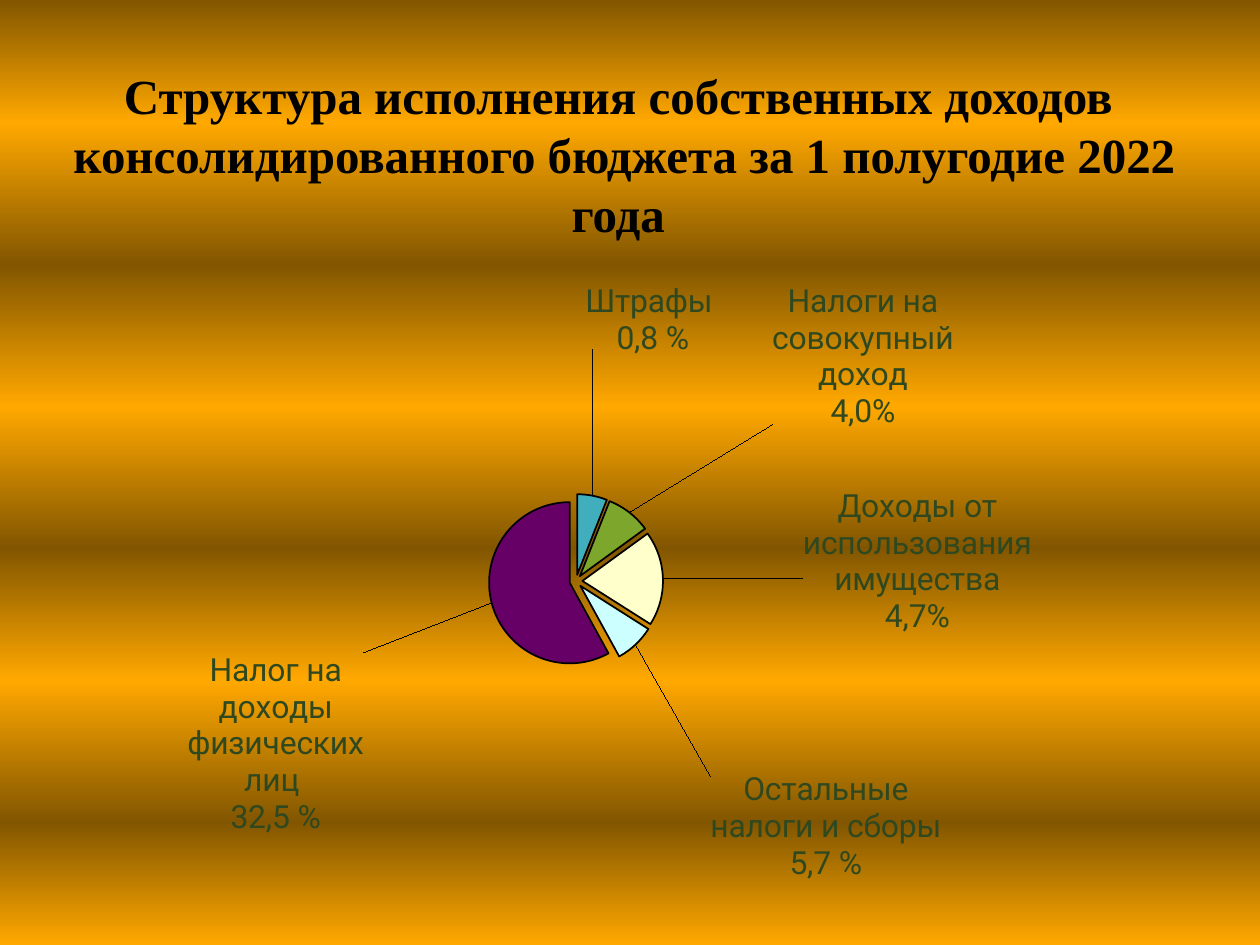
import pptx
import pptx.util
import pptx.chart.data
import pptx.dml.color
import pptx.enum.chart
import pptx.enum.text
import pptx.oxml
import pptx.oxml.ns
from lxml import etree

TITLE = ["Структура исполнения собственных доходов ",
         "консолидированного бюджета за 1 полугодие 2022 года "]
# share, fill, label lines, label shift in inches from the slice's outer end
SLICES = [
    (6, "41AEBD", ["Штрафы ", "0,8 %"], (-0.07, -1.1)),
    (9, "7DA62C", ["Налоги на совокупный доход", "4,0%"], (1.1, -0.65)),
    (19, "FFFFCC", ["Доходы от использования имущества", "4,7%"], (1.05, -0.13)),
    (8, "CCFFFF", ["Остальные налоги и сборы", "5,7 %"], (0.55, 1)),
    (58, "660066", ["Налог на доходы физических лиц ", "32,5 %"], (-0.96, 0.38)),
]
DARK, GOLD = "825600", "FFA800"
STOPS = [0, 13, 28, 43, 58, 72, 87, 100]
TITLE_BOX = (0.23, 0.47, 9.45, 1.5)
CHART_BOX = (0.28, 2.25, 9.39, 4.75)
PLOT_BOX = (2.27, 1.67, 4.04, 1.38)  # inside the chart

qn = pptx.oxml.ns.qn


def color(code):
    return pptx.dml.color.RGBColor.from_string(code)


def inches(box):
    return [pptx.util.Inches(n) for n in box]


def write(frame, lines, font, size, code, bold=False):
    frame.word_wrap = True
    for i, line in enumerate(lines):
        para = frame.add_paragraph() if i else frame.paragraphs[0]
        para.alignment = pptx.enum.text.PP_ALIGN.CENTER
        run = para.add_run()
        run.text = line
        run.font.name = font
        run.font.size = pptx.util.Pt(size)
        run.font.bold = bold
        run.font.color.rgb = color(code)


def shares(box):
    """Turn inches into shares of the chart's width and height."""
    wide, high = CHART_BOX[2:]
    return {tag: round(n / size, 3)
            for tag, n, size in zip("xywh", box, (wide, high) * 2)}


def layout(**values):
    """Make a manual chart layout; values keep the schema's order."""
    root = etree.Element(qn("c:layout"))
    manual = etree.SubElement(root, qn("c:manualLayout"))
    for tag, val in values.items():
        etree.SubElement(manual, qn("c:" + tag), val=str(val))
    return root


def paint(slide):
    """Fill the background with gold and dark bands."""
    fill = slide.background.fill
    fill.gradient()
    fill.gradient_angle = 270
    stops = slide.background._cSld.find(".//" + qn("a:gsLst"))
    for stop in list(stops):
        stops.remove(stop)
    for i, pos in enumerate(STOPS):
        stop = etree.SubElement(stops, qn("a:gs"), pos=str(pos * 1000))
        etree.SubElement(stop, qn("a:srgbClr"), val=GOLD if i % 2 else DARK)


def add_pie(slide):
    data = pptx.chart.data.CategoryChartData()
    data.categories = [str(i + 1) for i in range(len(SLICES))]
    data.add_series("Series 1", [s[0] for s in SLICES])
    kind = pptx.enum.chart.XL_CHART_TYPE.PIE
    chart = slide.shapes.add_chart(kind, *inches(CHART_BOX), data).chart
    chart.has_legend = chart.has_title = False
    chart.font.name = "Roboto"
    chart.font.size = pptx.util.Pt(18.2)
    chart.font.color.rgb = color("455F51")

    area = chart._chartSpace.find(".//" + qn("c:plotArea"))
    for old in area.findall(qn("c:layout")):
        area.remove(old)
    area.insert(0, layout(layoutTarget="inner", xMode="edge", yMode="edge",
                          **shares(PLOT_BOX)))

    plot = chart.plots[0]
    plot.vary_by_categories = True
    series = plot.series[0]
    series.format.line.color.rgb = color("000000")
    burst = etree.Element(qn("c:explosion"), val="8")
    series._element.find(qn("c:spPr")).addnext(burst)
    for i, (share, code, lines, shift) in enumerate(SLICES):
        point = series.points[i]
        point.format.fill.solid()
        point.format.fill.fore_color.rgb = color(code)
        point.format.line.color.rgb = color("000000")
        point.format.line.width = pptx.util.Pt(1)
        label = point.data_label
        write(label.text_frame, lines, "Roboto", 18.2, "30481F")
        label.position = pptx.enum.chart.XL_LABEL_POSITION.OUTSIDE_END
    for node, item in zip(series._element.iter(qn("c:dLbl")), SLICES):
        node.find(qn("c:idx")).addnext(layout(**shares(item[3])))


def main():
    deck = pptx.Presentation()
    deck.slide_width, deck.slide_height = inches((10, 7.5))
    slide = deck.slides.add_slide(deck.slide_layouts[5])
    paint(slide)
    title = slide.shapes.title
    title.left, title.top, title.width, title.height = inches(TITLE_BOX)
    title.text_frame.vertical_anchor = pptx.enum.text.MSO_ANCHOR.MIDDLE
    write(title.text_frame, TITLE, "Times New Roman", 28, "000000", True)
    add_pie(slide)
    deck.save("out.pptx")


if __name__ == "__main__":
    main()
